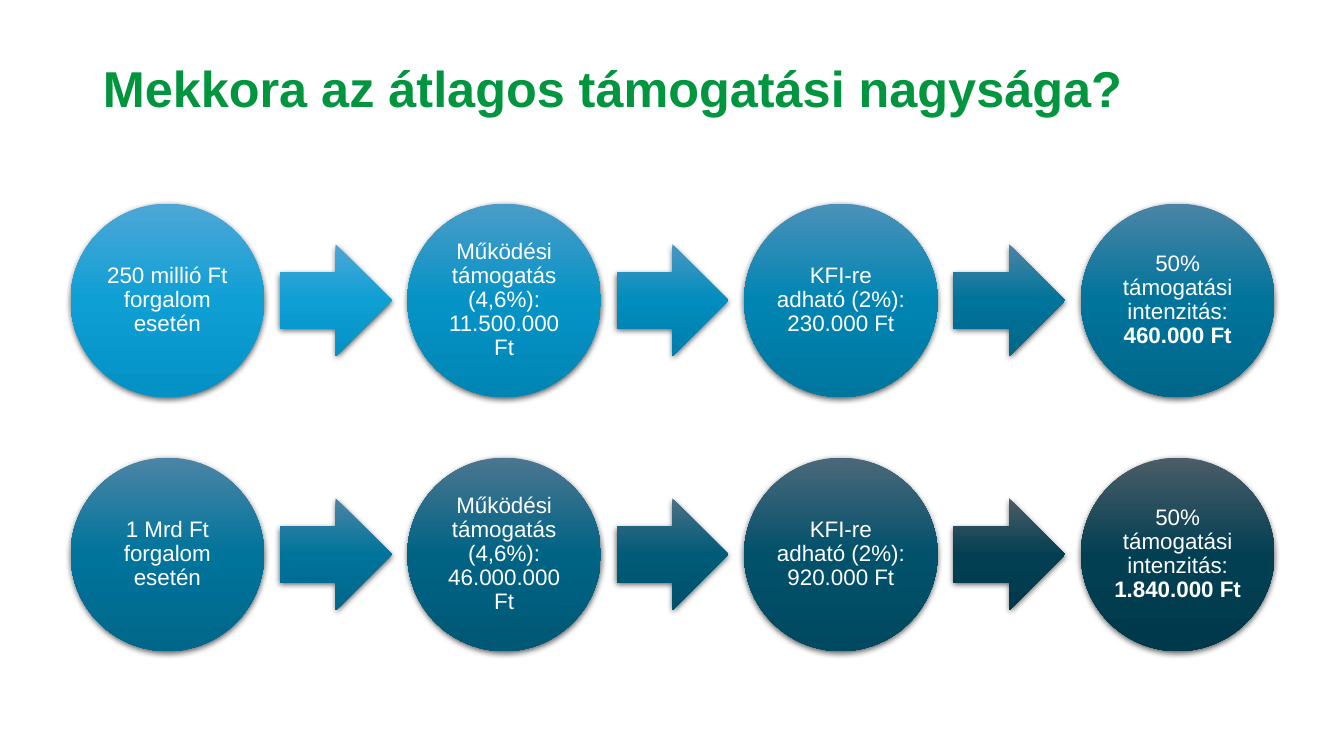
"""Build a slide with two chains of circles that work out the average aid."""
from copy import deepcopy
from dataclasses import dataclass

from lxml import etree
from pptx import Presentation
from pptx.dml.color import RGBColor
from pptx.enum.shapes import MSO_SHAPE
from pptx.enum.text import MSO_ANCHOR, PP_ALIGN
from pptx.oxml.ns import qn
from pptx.util import Inches, Pt

DISC, ARROW = MSO_SHAPE.OVAL, MSO_SHAPE.RIGHT_ARROW
LEFT, CENTER = PP_ALIGN.LEFT, PP_ALIGN.CENTER
MIDDLE = MSO_ANCHOR.MIDDLE

TITLE = "Mekkora az átlagos támogatási nagysága?"
CHAINS = [
    [("250 millió Ft forgalom esetén", ""),
     ("Működési támogatás (4,6%): 11.500.000 Ft", ""),
     ("KFI-re adható (2%): 230.000 Ft", ""),
     ("50% támogatási intenzitás: ", "460.000 Ft")],
    [("1 Mrd Ft forgalom esetén", ""),
     ("Működési támogatás (4,6%): 46.000.000 Ft", ""),
     ("KFI-re adható (2%): 920.000 Ft", ""),
     ("50% támogatási intenzitás: ", "1.840.000 Ft")],
]


@dataclass(frozen=True)
class Theme:
    """Hold the font, type sizes and colours."""
    font: str = "Arial"
    head: int = 36
    body: int = 16
    green: str = "00953E"
    white: str = "FFFFFF"
    shade: str = "000000"
    sky: tuple = ("4DA7D6", "0E9FD5", "0491C5")
    azure: tuple = ("4B9CC8", "0593C6", "0085B4")
    blue: tuple = ("4B97C1", "018DBE", "007DAA")
    ocean: tuple = ("4B91B9", "0085B3", "00769F")
    steel: tuple = ("4B84A6", "00749B", "00678A")
    teal: tuple = ("4B7690", "006384", "005875")
    slate: tuple = ("4B6F85", "005B78", "00506B")
    deep: tuple = ("4B687A", "01516B", "004960")
    night: tuple = ("4B5D68", "033F52", "00394C")


T = Theme()
DISC_FILLS = [[T.sky, T.azure, T.ocean, T.steel],
              [T.steel, T.teal, T.deep, T.night]]
ARROW_FILLS = [[T.sky, T.blue, T.steel], [T.steel, T.slate, T.night]]

WIDE, HIGH = 13.33, 7.5
SIDE, TOP = 0.7, 2.02
COL, ROW = 3.34, 2.52
ROUND, POINT = 1.92, 1.11


def write(shape, text, bold="", size=T.body, color=T.white, align=CENTER,
          strong=False, inset=0.02, after=0):
    """Fill a shape with one paragraph, with an optional bold ending."""
    frame = shape.text_frame
    frame.word_wrap = True
    frame.vertical_anchor = MIDDLE
    frame.margin_left = frame.margin_right = Inches(inset)
    frame.margin_top = frame.margin_bottom = Inches(inset)
    para = frame.paragraphs[0]
    para.alignment, para.line_spacing = align, 0.9
    para.space_before, para.space_after = Pt(0), Pt(after)
    for part, heavy in ((text, strong), (bold, True)):
        if part:
            run = para.add_run()
            run.text = part
            run.font.name, run.font.size = T.font, Pt(size)
            run.font.bold = heavy
            run.font.color.rgb = RGBColor.from_string(color)


def shade(shape):
    """Give a shape its soft shadow straight below."""
    shape.shadow.inherit = False
    effects = shape._element.spPr.find(qn("a:effectLst"))
    outer = etree.SubElement(effects, qn("a:outerShdw"), blurRad=str(Pt(4.5)),
                             dist=str(Pt(1.5)), dir="5400000", rotWithShape="0")
    tint = etree.SubElement(outer, qn("a:srgbClr"), val=T.shade)
    etree.SubElement(tint, qn("a:alpha"), val="63000")


def draw(group, kind, mid_x, mid_y, size, colors):
    """Add a square-framed shape around a centre, with a three-stop gradient."""
    shape = group.shapes.add_shape(
        kind, Inches(mid_x - size / 2), Inches(mid_y - size / 2),
        Inches(size), Inches(size))
    shape.line.fill.background()
    shape.fill.gradient()
    shape.fill.gradient_angle = 270
    first = shape._element.spPr.find(".//" + qn("a:gs"))
    first.addnext(deepcopy(first))
    for stop, color, place in zip(shape.fill.gradient_stops, colors, (0, 0.5, 1)):
        stop.color.rgb = RGBColor.from_string(color)
        stop.position = place
    shade(shape)
    return shape


def main():
    """Lay out the title and both chains, then save."""
    deck = Presentation()
    deck.slide_width, deck.slide_height = Inches(WIDE), Inches(HIGH)
    slide = deck.slides.add_slide(deck.slide_layouts[5])
    title = slide.shapes.title
    title.left, title.top = Inches(0.92), Inches(0.18)
    title.width, title.height = Inches(10.73), Inches(1.45)
    write(title, TITLE, size=T.head, color=T.green, align=LEFT,
          strong=True, inset=0.1)

    for row, chain in enumerate(CHAINS):
        group = slide.shapes.add_group_shape()
        mid_y = TOP + row * ROW + ROUND / 2
        for col, (text, bold) in enumerate(chain):
            mid_x = SIDE + col * COL + ROUND / 2
            disc = draw(group, DISC, mid_x, mid_y, ROUND, DISC_FILLS[row][col])
            write(disc, text, bold, after=T.body * 0.35)
            if col < len(chain) - 1:
                draw(group, ARROW, mid_x + COL / 2, mid_y, POINT,
                     ARROW_FILLS[row][col])
    deck.save("out.pptx")


if __name__ == "__main__":
    main()
